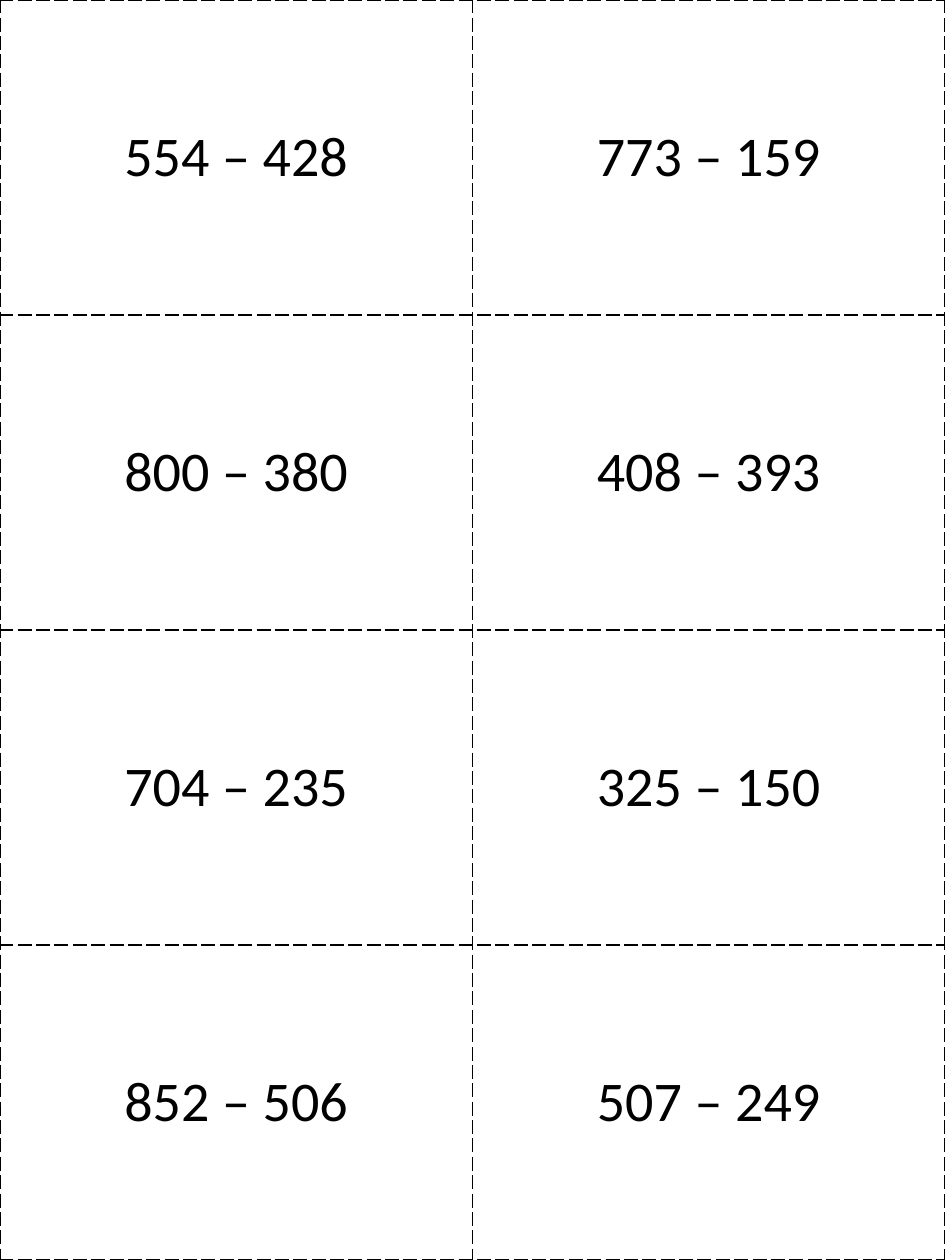
from dataclasses import dataclass

from lxml import etree
from pptx import Presentation
from pptx.dml.color import RGBColor
from pptx.enum.text import MSO_ANCHOR, PP_ALIGN
from pptx.oxml.ns import qn
from pptx.util import Pt

CENTER = PP_ALIGN.CENTER
MIDDLE = MSO_ANCHOR.MIDDLE
EMU_PER_PX = 914400 / 126
WIDTH, HEIGHT = 945, 1260
BORDER_SIDES = ("a:lnL", "a:lnR", "a:lnT", "a:lnB")

PROBLEMS = [
    ["554 – 428", "773 – 159"],
    ["800 – 380", "408 – 393"],
    ["704 – 235", "325 – 150"],
    ["852 – 506", "507 – 249"],
]


@dataclass(frozen=True)
class Theme:
    font: str = "Calibri"
    size: int = 32
    ink: str = "000000"
    border: int = 1
    dash: str = "lgDash"


def px(n):
    return round(n * EMU_PER_PX)


class CardSheet:
    def __init__(self, slide, theme):
        self.s = slide
        self.theme = theme

    def table(self, rows, x, y, w, h):
        frame = self.s.shapes.add_table(
            len(rows), len(rows[0]), px(x), px(y), px(w), px(h))
        table = frame.table
        table.first_row = False
        table.horz_banding = False
        for r, row in enumerate(rows):
            for c, text in enumerate(row):
                self.card(table.cell(r, c), text)

    def card(self, cell, text):
        self.borders(cell)
        cell.fill.background()
        cell.vertical_anchor = MIDDLE
        cell.text_frame.text = text
        p = cell.text_frame.paragraphs[0]
        p.alignment = CENTER
        font = p.runs[0].font
        font.name = self.theme.font
        font.size = Pt(self.theme.size)
        font.color.rgb = RGBColor.from_string(self.theme.ink)

    def borders(self, cell):
        tc_pr = cell._tc.get_or_add_tcPr()
        for side in BORDER_SIDES:
            ln = etree.SubElement(tc_pr, qn(side), w=str(Pt(self.theme.border)))
            fill = etree.SubElement(ln, qn("a:solidFill"))
            etree.SubElement(fill, qn("a:srgbClr"), val=self.theme.ink)
            etree.SubElement(ln, qn("a:prstDash"), val=self.theme.dash)


def main():
    prs = Presentation()
    prs.slide_width, prs.slide_height = px(WIDTH), px(HEIGHT)
    s = prs.slides.add_slide(prs.slide_layouts[6])
    CardSheet(s, Theme()).table(PROBLEMS, 0, 0, WIDTH, HEIGHT)
    prs.save("out.pptx")


if __name__ == "__main__":
    main()
